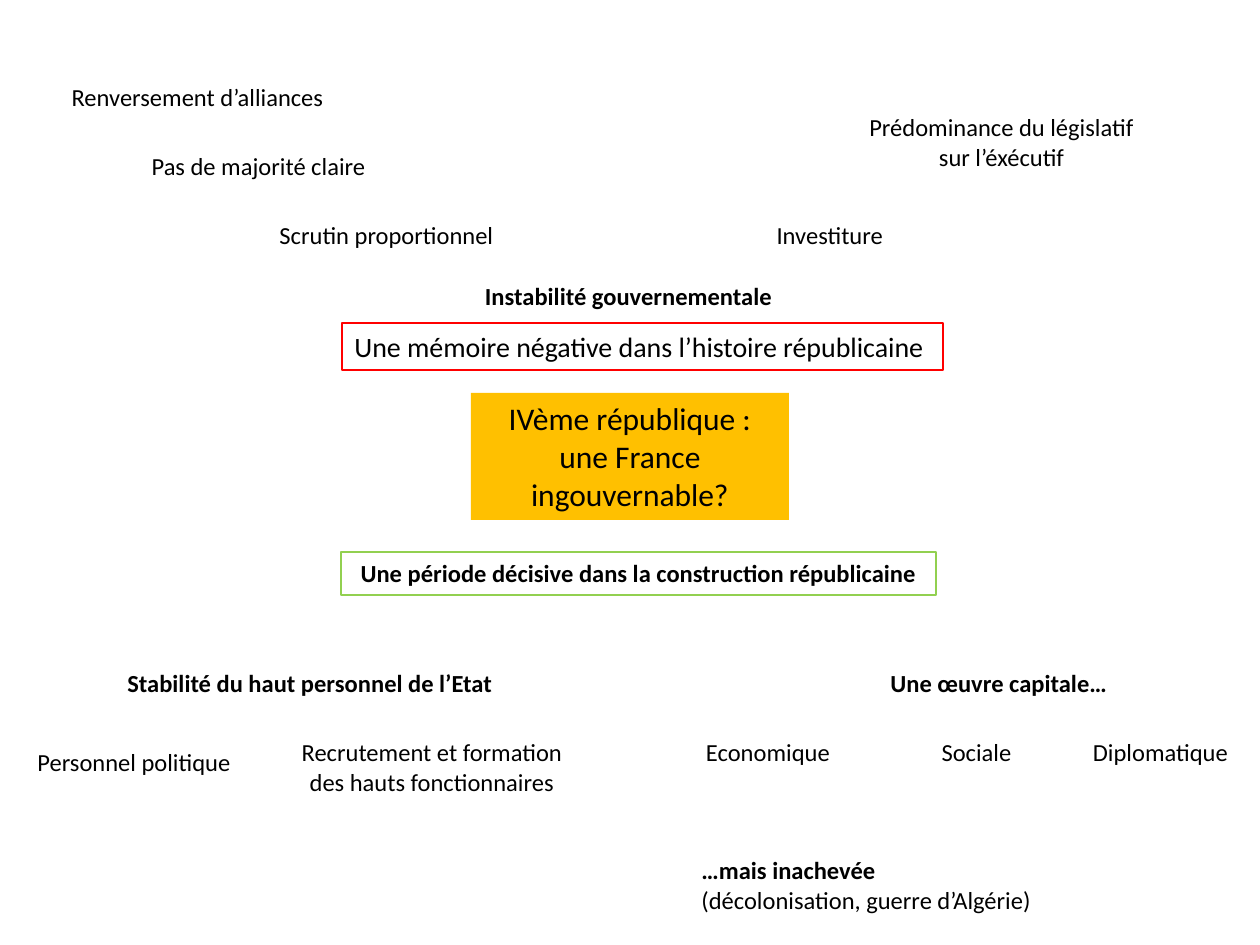
"""Build a mind map slide on the French Fourth Republic."""
from pptx import Presentation
from pptx.dml.color import RGBColor
from pptx.enum import shapes, text
from pptx.util import Pt

PX = 914400 / 126
ROW, TALL = 43, 72
MID, LEFT = text.PP_ALIGN.CENTER, text.PP_ALIGN.LEFT

# words, (left, top, width, height), size, align, wrap, fill, line
FRAMES = [
    ("IVème république : une France ingouvernable?",
     (471, 393, 318, 127), 18, False, MID, True, "FFC000", None),
    ("Une mémoire négative dans l’histoire républicaine",
     (342, 323, 601, 47), 16, False, LEFT, False, None, "FF0000"),
    ("Une période décisive dans la construction républicaine",
     (341, 552, 595, ROW), 14, True, MID, False, None, "92D050"),
]
HEADS = [
    ("Instabilité gouvernementale", (471, 275, 315, ROW), MID),
    ("Stabilité du haut personnel de l’Etat", (115, 662, 393, ROW), LEFT),
    ("Une œuvre capitale…", (878, 662, 251, ROW), LEFT),
    ("…mais inachevée\n(décolonisation, guerre d’Algérie)",
     (689, 849, 372, TALL), LEFT),
]
IDEAS = [
    ("Renversement d’alliances", (44, 76, 307, ROW)),
    ("Pas de majorité claire", (105, 145, 307, ROW)),
    ("Scrutin proportionnel", (233, 214, 307, ROW)),
    ("Investiture ", (679, 214, 307, ROW)),
    ("Prédominance du législatif sur l’éxécutif", (848, 106, 307, TALL)),
    ("Recrutement et formation des hauts fonctionnaires",
     (273, 731, 318, TALL)),
    ("Economique", (669, 731, 198, ROW)),
    ("Sociale", (907, 731, 139, ROW)),
    ("Diplomatique", (1076, 731, 169, ROW)),
]
STAFF = ("Personnel politique", (25, 741, 221, ROW))


def rgb(code):
    """Turn a hex string into a colour."""
    return RGBColor.from_string(code)


def emu(box):
    """Scale a box from px to EMU."""
    return [round(n * PX) for n in box]


def write(shape, words, size=14, bold=False, align=MID, wrap=True):
    """Put words in a shape; only the first paragraph may be bold."""
    frame = shape.text_frame
    frame.text = words
    frame.word_wrap = wrap
    frame.auto_size = text.MSO_AUTO_SIZE.SHAPE_TO_FIT_TEXT
    frame.vertical_anchor = text.MSO_ANCHOR.TOP
    for i, para in enumerate(frame.paragraphs):
        para.alignment = align
        for run in para.runs:
            font = run.font
            font.name, font.size = "Calibri", Pt(size)
            font.bold = bold and i == 0
            font.color.rgb = rgb("000000")


def panel(page, box, fill, line):
    """Add a flat rectangle with an optional fill and line."""
    shape = page.add_shape(shapes.MSO_SHAPE.RECTANGLE, *emu(box))
    shape.shadow.inherit = False
    if fill:
        shape.fill.solid()
        shape.fill.fore_color.rgb = rgb(fill)
    else:
        shape.fill.background()
    if line:
        shape.line.color.rgb = rgb(line)
        shape.line.width = Pt(0.75)
    else:
        shape.line.fill.background()
    return shape


def main():
    """Lay out the slide and save it."""
    deck = Presentation()
    deck.slide_width, deck.slide_height = emu((1260, 945))
    page = deck.slides.add_slide(deck.slide_layouts[6]).shapes
    for words, box, size, bold, align, wrap, fill, line in FRAMES:
        write(panel(page, box, fill, line), words, size, bold, align, wrap)
    for words, box, align in HEADS:
        write(page.add_textbox(*emu(box)), words, 14, True, align, False)
    for words, box in IDEAS:
        write(page.add_textbox(*emu(box)), words)
    words, box = STAFF
    write(page.add_textbox(*emu(box)), words, align=LEFT, wrap=False)
    deck.save("out.pptx")


if __name__ == "__main__":
    main()
